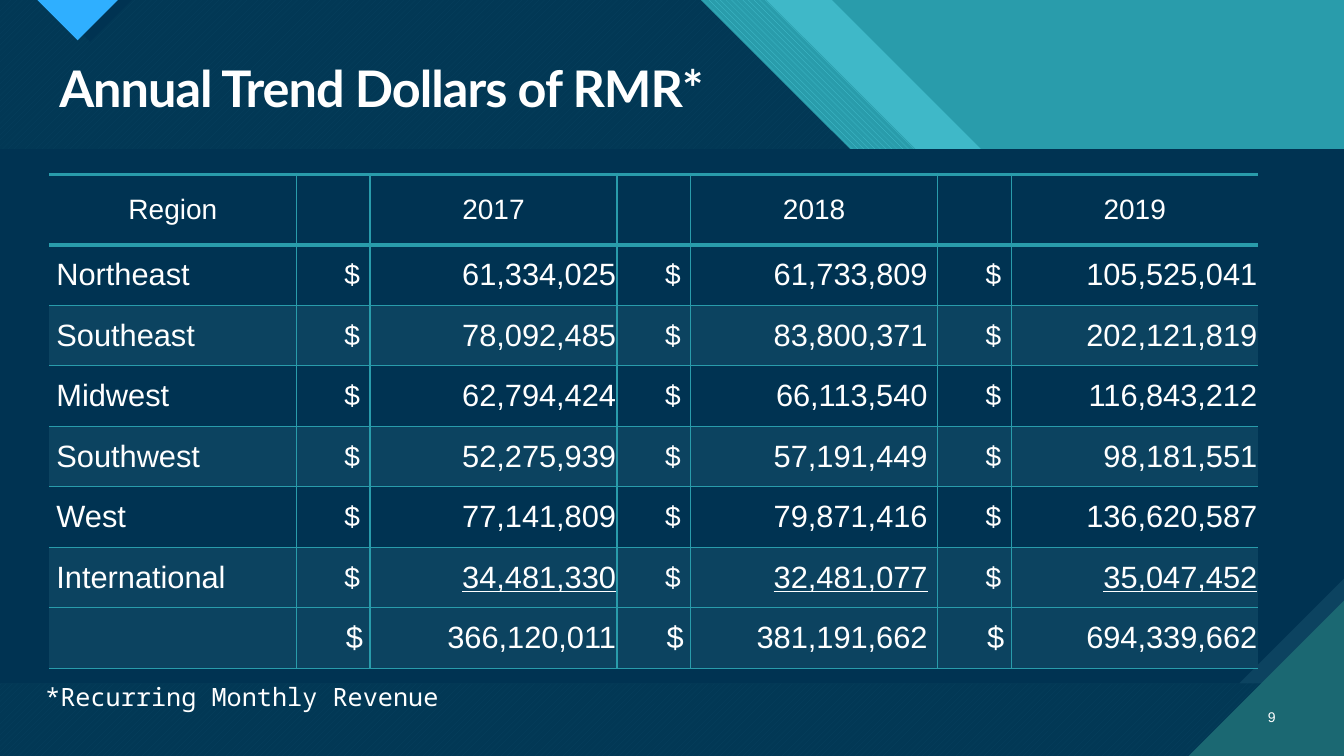
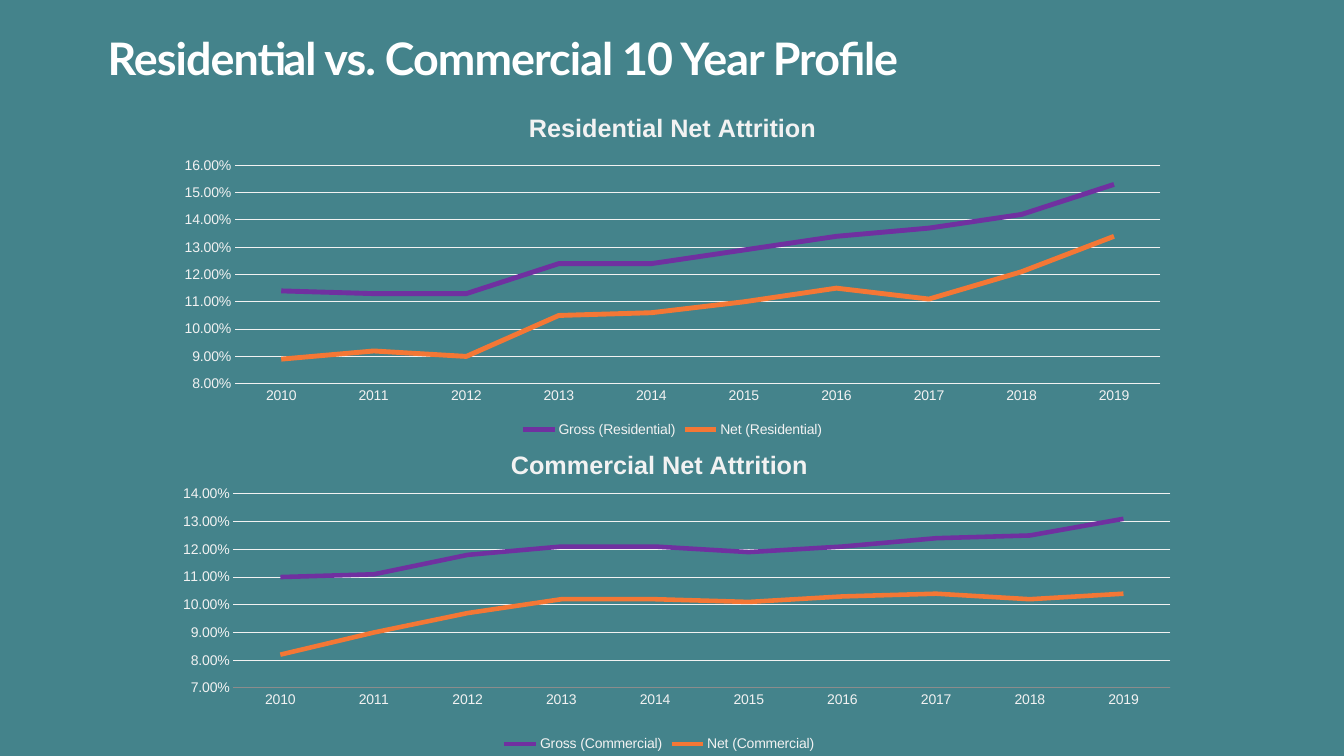
from dataclasses import dataclass

from lxml import etree
from pptx import Presentation
from pptx import util as u
from pptx.chart.data import CategoryChartData
from pptx.dml.color import RGBColor
from pptx.enum import chart as chart_enum, dml, text
from pptx.oxml import ns


@dataclass(frozen=True)
class Theme:
    # Colours
    white: str = "FFFFFF"
    navy: str = "003352"
    row_band: str = "0C4360"
    teal: str = "299CAB"
    aqua: str = "47C3D3"
    deep_teal: str = "1B6872"
    blue: str = "2FAFFF"
    chart_page: str = "44838B"
    chart_text: str = "F2F2F2"
    axis_gray: str = "8C8C8C"
    gross: str = "7030A0"
    net: str = "F47735"
    # Fonts and sizes
    title_font: str = "Lato"
    body_font: str = "Arial"
    mono_font: str = "Noto Sans Mono"
    chart_title: int = 18
    chart_label: int = 10
    page_number: int = 10
    header: int = 20
    figure: int = 22
    footnote: int = 18


THEME = Theme()
WIDTH, HEIGHT = 13.33, 7.5
BAND_TOP, BAND_BOTTOM = 1.48, 6.78

YEARS = ["2017", "2018", "2019"]
REVENUE = [
    ("Northeast", "61,334,025", "61,733,809", "105,525,041"),
    ("Southeast", "78,092,485", "83,800,371", "202,121,819"),
    ("Midwest", "62,794,424", "66,113,540", "116,843,212"),
    ("Southwest", "52,275,939", "57,191,449", "98,181,551"),
    ("West", "77,141,809", "79,871,416", "136,620,587"),
    ("International", "34,481,330", "32,481,077", "35,047,452"),
    ("", "366,120,011", "381,191,662", "694,339,662"),
]
RESIDENTIAL = {
    "Gross": (0.114, 0.113, 0.113, 0.124, 0.124, 0.129, 0.134, 0.137, 0.142, 0.153),
    "Net": (0.089, 0.092, 0.09, 0.105, 0.106, 0.11, 0.115, 0.111, 0.121, 0.134),
}
COMMERCIAL = {
    "Gross": (0.11, 0.111, 0.118, 0.121, 0.121, 0.119, 0.121, 0.124, 0.125, 0.131),
    "Net": (0.082, 0.09, 0.097, 0.102, 0.102, 0.101, 0.103, 0.104, 0.102, 0.104),
}


def rgb(color):
    return RGBColor.from_string(color)


def style_font(font, name, size, color=THEME.white, bold=False):
    font.name, font.size, font.bold = name, u.Pt(size), bold
    font.color.rgb = rgb(color)


def set_background(slide, color):
    slide.background.fill.solid()
    slide.background.fill.fore_color.rgb = rgb(color)


# Text
def add_text(slide, box, content, font, size, bold=False,
             align=text.PP_ALIGN.LEFT, anchor=text.MSO_ANCHOR.TOP):
    frame = slide.shapes.add_textbox(*map(u.Inches, box)).text_frame
    frame.word_wrap = True
    frame.vertical_anchor = anchor
    paragraph = frame.paragraphs[0]
    paragraph.text = content
    paragraph.alignment = align
    style_font(paragraph.font, font, size, bold=bold)
    return paragraph


def add_title(slide, box, content, size):
    paragraph = add_text(slide, box, content, THEME.title_font, size, bold=True)
    paragraph.line_spacing = 0.9
    paragraph.runs[0].font._element.set("spc", "-70")


# Backdrop
def add_polygon(slide, points, color, alpha=None, pattern=None, back=None):
    corners = [(u.Inches(x), u.Inches(y)) for x, y in points]
    builder = slide.shapes.build_freeform(*corners[0])
    builder.add_line_segments(corners[1:], close=True)
    shape = builder.convert_to_shape()
    shape.shadow.inherit = False
    shape.line.fill.background()
    if pattern is None:
        shape.fill.solid()
    else:
        shape.fill.patterned()
        shape.fill.pattern = pattern
        shape.fill.back_color.rgb = rgb(back)
    shape.fill.fore_color.rgb = rgb(color)
    if alpha is not None:
        fill_color = shape.element.spPr.find(ns.qn("a:solidFill"))[0]
        etree.SubElement(fill_color, ns.qn("a:alpha"), val=str(alpha * 1000))


def slanted(top_right):
    """Full page whose upper right corner is cut at 45 degrees."""
    drop = 2.97
    return [(0, 0), (top_right, 0), (top_right + drop, drop), (WIDTH, drop),
            (WIDTH, HEIGHT), (0, HEIGHT)]


def tab(left, width):
    return [(left, 0), (left + width, 0), (left + width / 2, width / 2)]


def add_backdrop(slide):
    set_background(slide, THEME.teal)
    patterns = dml.MSO_PATTERN
    # Diagonal layers
    add_polygon(slide, slanted(8.25), THEME.aqua, alpha=74)
    add_polygon(slide, slanted(7.6), THEME.aqua,
                pattern=patterns.WIDE_DOWNWARD_DIAGONAL, back=THEME.teal)
    add_polygon(slide, slanted(6.95), THEME.aqua,
                pattern=patterns.WIDE_UPWARD_DIAGONAL, back=THEME.deep_teal)
    add_polygon(slide, slanted(6.95), THEME.navy, alpha=90)
    # Tab at the top edge
    add_polygon(slide, tab(0.48, 0.83), THEME.navy)
    add_polygon(slide, tab(0.37, 0.8), THEME.blue)
    # Content band with a snipped corner
    for snip, color in ((0, THEME.row_band), (1.04, THEME.navy)):
        add_polygon(slide, [(0, BAND_TOP), (WIDTH, BAND_TOP), (WIDTH, BAND_BOTTOM - snip),
                            (WIDTH - snip, BAND_BOTTOM), (0, BAND_BOTTOM)], color)
    # Page number corner
    corner = 1.54
    add_polygon(slide, [(WIDTH - corner, HEIGHT), (WIDTH, HEIGHT),
                        (WIDTH, HEIGHT - corner)], THEME.deep_teal)


# Table
def set_borders(cell, **widths):
    properties = cell._tc.get_or_add_tcPr()
    for side in "LRTB":
        width = widths[side]
        line = etree.SubElement(properties, ns.qn(f"a:ln{side}"), w=str(u.Pt(width)))
        if width:
            fill = etree.SubElement(line, ns.qn("a:solidFill"))
            etree.SubElement(fill, ns.qn("a:srgbClr"), val=THEME.teal)
        else:
            etree.SubElement(line, ns.qn("a:noFill"))


def fill_cell(cell, content, size, align, side_margin, right_margin=None, underline=False):
    cell.vertical_anchor = text.MSO_ANCHOR.MIDDLE
    cell.margin_left = u.Inches(side_margin)
    cell.margin_right = u.Inches(side_margin if right_margin is None else right_margin)
    paragraph = cell.text_frame.paragraphs[0]
    paragraph.text = content
    paragraph.alignment = align
    style_font(paragraph.font, THEME.body_font, size)
    if underline:
        paragraph.font.underline = True


def add_revenue_table(slide):
    left, center, right = text.PP_ALIGN.LEFT, text.PP_ALIGN.CENTER, text.PP_ALIGN.RIGHT
    column_widths = [2.45] + [0.73, 2.45] * len(YEARS)
    row_heights = [0.7] + [0.6] * len(REVENUE)
    last_row, last_column = len(REVENUE), len(column_widths) - 1
    table = slide.shapes.add_table(
        len(row_heights), len(column_widths), u.Inches(0.49), u.Inches(1.73),
        u.Inches(sum(column_widths)), u.Inches(sum(row_heights))).table
    table.first_row = table.horz_banding = False
    for column, width in zip(table.columns, column_widths):
        column.width = u.Inches(width)
    for row, height in zip(table.rows, row_heights):
        row.height = u.Inches(height)

    # Borders and banding
    for r in range(last_row + 1):
        for c in range(last_column + 1):
            cell = table.cell(r, c)
            set_borders(cell, L=int(c > 0), R=int(c < last_column),
                        T=3 if r < 2 else 1, B=3 if r == 0 else 1)
            if r == last_row or (r and r % 2 == 0):
                cell.fill.solid()
                cell.fill.fore_color.rgb = rgb(THEME.row_band)
            else:
                cell.fill.background()

    # Header
    fill_cell(table.cell(0, 0), "Region", THEME.header, center, 0.1)
    for i, year in enumerate(YEARS):
        fill_cell(table.cell(0, 2 * i + 2), year, THEME.header, center, 0.1)

    # Regions and total
    for r, (region, *amounts) in enumerate(REVENUE, start=1):
        total = r == last_row
        fill_cell(table.cell(r, 0), region, THEME.figure, left, 0.07)
        for i, amount in enumerate(amounts):
            fill_cell(table.cell(r, 2 * i + 1), "$", THEME.figure if total else THEME.header,
                      right, 0.07 if total else 0.1)
            fill_cell(table.cell(r, 2 * i + 2), amount, THEME.figure, right, 0.01,
                      right_margin=0.1 if YEARS[i] == "2018" else 0.01,
                      underline=r == last_row - 1)


# Charts
def set_plot_area(chart, x, y, w, h):
    plot_area = chart._chartSpace.chart.plotArea
    for old in plot_area.findall(ns.qn("c:layout")):
        plot_area.remove(old)
    layout = etree.Element(ns.qn("c:layout"))
    plot_area.insert(0, layout)
    manual = etree.SubElement(layout, ns.qn("c:manualLayout"))
    for tag, value in (("layoutTarget", "inner"), ("xMode", "edge"), ("yMode", "edge"),
                       ("x", x), ("y", y), ("w", w), ("h", h)):
        etree.SubElement(manual, ns.qn(f"c:{tag}"), val=str(value))


def add_attrition_chart(slide, box, segment, rates, low, high, line_width, axis_color):
    data = CategoryChartData(number_format="0.00%")
    data.categories = [str(year) for year in range(2010, 2020)]
    for measure, values in rates.items():
        data.add_series(f"{measure} ({segment})", values)
    chart = slide.shapes.add_chart(chart_enum.XL_CHART_TYPE.LINE,
                                   *map(u.Inches, box), data).chart
    style_font(chart.font, THEME.body_font, THEME.chart_label, THEME.chart_text)

    # Title and legend
    chart.has_title = True
    heading = chart.chart_title.text_frame.paragraphs[0]
    heading.text = f"{segment} Net Attrition"
    style_font(heading.font, THEME.body_font, THEME.chart_title, THEME.chart_text, bold=True)
    chart.has_legend = True
    chart.legend.position = chart_enum.XL_LEGEND_POSITION.BOTTOM
    chart.legend.include_in_layout = False

    # Axes
    rate_axis, year_axis = chart.value_axis, chart.category_axis
    for axis in (rate_axis, year_axis):
        axis.major_tick_mark = axis.minor_tick_mark = chart_enum.XL_TICK_MARK.NONE
    rate_axis.minimum_scale, rate_axis.maximum_scale = low, high
    rate_axis.major_unit = 0.01
    rate_axis.tick_labels.number_format = "0.00%"
    rate_axis.tick_labels.number_format_is_linked = False
    rate_axis.format.line.fill.background()
    for line, color in ((rate_axis.major_gridlines.format.line, THEME.chart_text),
                        (year_axis.format.line, axis_color)):
        line.color.rgb = rgb(color)
        line.width = u.Pt(0.75)

    # Series
    plot = chart.plots[0]
    plot.vary_by_categories = False
    for series, color in zip(plot.series, (THEME.gross, THEME.net)):
        series.smooth = False
        series.marker.style = chart_enum.XL_MARKER_STYLE.NONE
        series.format.line.color.rgb = rgb(color)
        series.format.line.width = u.Pt(line_width)
    return chart


# Slides
def build_revenue_slide(slide):
    add_backdrop(slide)
    add_title(slide, (0.49, 0.59, 12.26, 0.65), "Annual Trend Dollars of RMR*", 36)
    add_revenue_table(slide)
    add_text(slide, (12.31, 6.91, 0.44, 0.4), "9", THEME.body_font, THEME.page_number,
             align=text.PP_ALIGN.RIGHT, anchor=text.MSO_ANCHOR.MIDDLE)
    add_text(slide, (0.35, 6.71, 4.6, 0.4), "*Recurring Monthly Revenue",
             THEME.mono_font, THEME.footnote)


def build_attrition_slide(slide):
    set_background(slide, THEME.chart_page)
    add_title(slide, (0.97, 0.32, 9.4, 1.44), "Residential vs. Commercial 10 Year Profile", 32)
    commercial = add_attrition_chart(slide, (1.26, 4.29, 10.56, 3.21), "Commercial",
                                     COMMERCIAL, 0.07, 0.14, 3.25, THEME.axis_gray)
    set_plot_area(commercial, 0.1, 0.19, 0.88, 0.6)
    add_attrition_chart(slide, (1.63, 0.94, 10.08, 3.44), "Residential",
                        RESIDENTIAL, 0.08, 0.16, 3.5, THEME.chart_text)


def main():
    presentation = Presentation()
    presentation.slide_width, presentation.slide_height = u.Inches(WIDTH), u.Inches(HEIGHT)
    blank = presentation.slide_layouts[6]
    for build in (build_revenue_slide, build_attrition_slide):
        build(presentation.slides.add_slide(blank))
    presentation.save("out.pptx")


if __name__ == "__main__":
    main()
